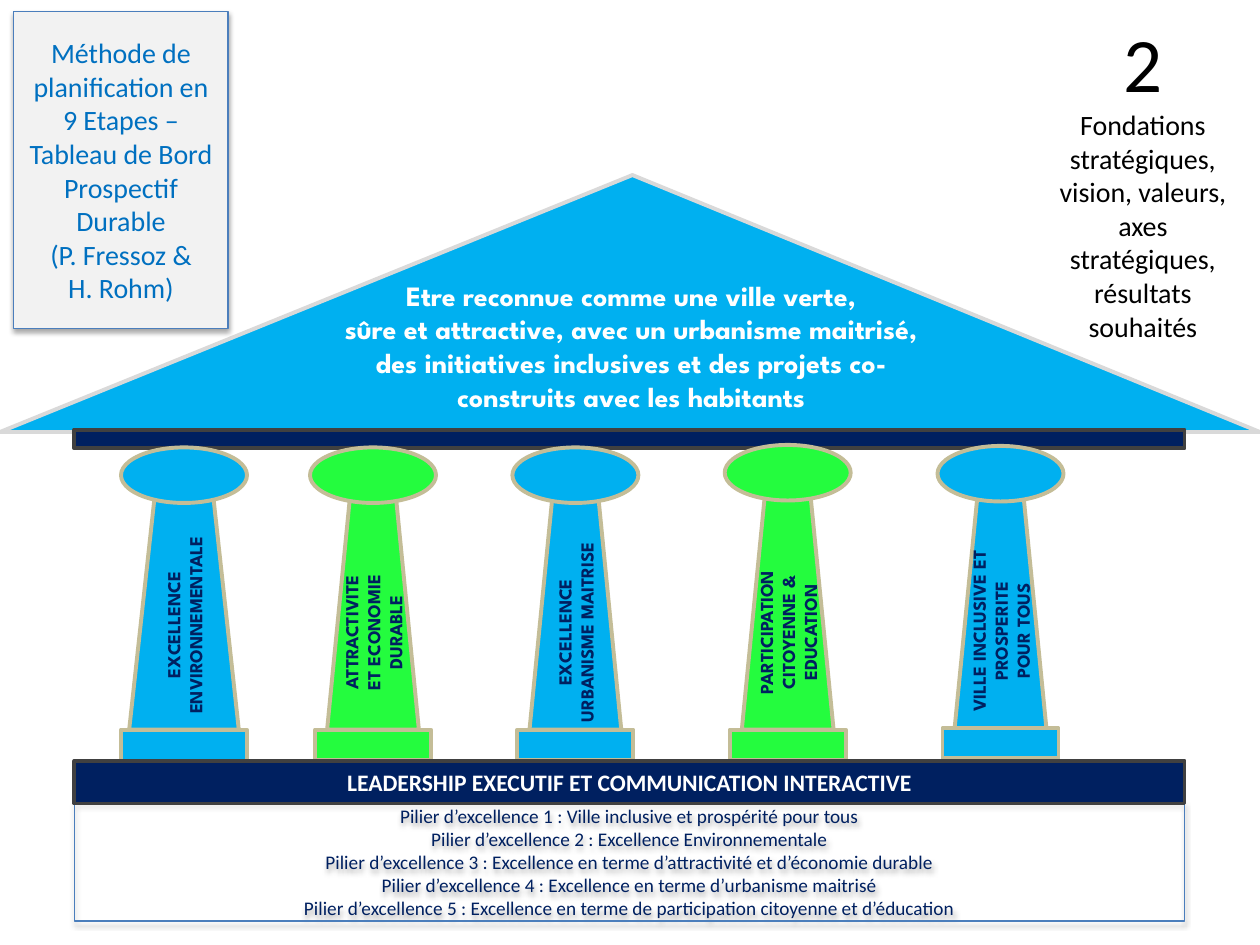
from dataclasses import dataclass

from lxml import etree
from pptx import Presentation
from pptx.dml.color import RGBColor
from pptx.enum import shapes, text
from pptx.oxml import ns
from pptx.util import Cm, Pt


@dataclass(frozen=True)
class Theme:
    sky: str = "00B0F0"
    green: str = "24FC3E"
    navy: str = "002060"
    stone: str = "C4BD97"
    charcoal: str = "404040"
    silver: str = "D9D9D9"
    pale: str = "F2F2F2"
    edge: str = "4B7EBC"
    link_blue: str = "0070C0"
    white: str = "FFFFFF"
    black: str = "000000"
    plain: str = "Calibri"
    display: str = "League Spartan"
    number_size: float = 44
    text_size: float = 16
    bar_size: float = 13.5
    list_size: float = 11
    pillar_size: float = 10.5
    heavy: float = 2.25
    thin: float = 0.75


THEME = Theme()
SHAPE = shapes.MSO_SHAPE


class TempleSlide:
    """Holds the theme and the slide being drawn."""

    def __init__(self, slide, theme):
        self.slide = slide
        self.theme = theme

    def outline(self, item, color, width):
        item.line.color.rgb = RGBColor.from_string(color)
        item.line.width = Pt(width)

    def style(self, font, size, color, name=None, bold=False):
        font.size, font.bold = Pt(size), bold
        font.name = name or self.theme.plain
        font.color.rgb = RGBColor.from_string(color)

    def block(self, kind, box, fill, line, width=None, parent=None):
        item = (parent or self.slide).shapes.add_shape(kind, *map(Cm, box))
        item.shadow.inherit = False
        item.fill.solid()
        item.fill.fore_color.rgb = RGBColor.from_string(fill)
        self.outline(item, line, width or self.theme.heavy)
        return item

    def label(self, item, lines, size, color, name=None, bold=False,
              margins=(0.25, 0.13, 0.25, 0.13), bullets_off=False):
        frame = item.text_frame
        frame.word_wrap = True
        frame.auto_size = text.MSO_AUTO_SIZE.NONE
        frame.vertical_anchor = text.MSO_ANCHOR.MIDDLE
        (frame.margin_left, frame.margin_top,
         frame.margin_right, frame.margin_bottom) = map(Cm, margins)
        for index, line in enumerate(lines):
            paragraph = frame.add_paragraph() if index else frame.paragraphs[0]
            if bullets_off:
                props = paragraph._p.get_or_add_pPr()
                props.set("marL", "0")
                props.set("indent", "0")
                etree.SubElement(props, ns.qn("a:buNone"))
                paragraph.space_before = Pt(0)
            paragraph.text = line
            paragraph.alignment = text.PP_ALIGN.CENTER
            self.style(paragraph.font, size, color, name, bold)

    def drop_shadow(self, item):
        props = item._element.spPr
        for old in props.findall(ns.qn("a:effectLst")):
            props.remove(old)
        effects = etree.SubElement(props, ns.qn("a:effectLst"))
        shadow = etree.SubElement(
            effects, ns.qn("a:outerShdw"), blurRad=str(Pt(3.1)),
            dist=str(Pt(1.8)), dir="5400000", rotWithShape="0")
        color = etree.SubElement(shadow, ns.qn("a:srgbClr"), val=self.theme.black)
        etree.SubElement(color, ns.qn("a:alpha"), val="35000")

    def place(self, item, box):
        item.left, item.top, item.width, item.height = map(Cm, box)

    def step_title(self, number, wording, box):
        title = self.slide.shapes.title
        self.place(title, box)
        frame = title.text_frame
        frame.word_wrap = True
        frame.auto_size = text.MSO_AUTO_SIZE.NONE
        frame.vertical_anchor = text.MSO_ANCHOR.TOP
        heading = frame.paragraphs[0]
        heading.alignment = text.PP_ALIGN.CENTER
        step = heading.add_run()
        step.text = number
        self.style(step.font, self.theme.number_size, self.theme.black)
        heading.add_line_break()
        caption = heading.add_run()
        caption.text = wording
        self.style(caption.font, self.theme.text_size, self.theme.black)

    def pillar_list(self, lines, box):
        body = self.slide.placeholders[1]
        self.place(body, box)
        self.outline(body, self.theme.edge, self.theme.thin)
        self.drop_shadow(body)
        self.label(body, lines, self.theme.list_size, self.theme.navy,
                   bullets_off=True)

    def pillar(self, lines, center, top, foot, color, shaft=(1.85, 4.7),
               base=(2.34, 0.61)):
        group = self.slide.shapes.add_group_shape()
        parts = (
            (SHAPE.TRAPEZOID, foot - shaft[1], shaft),
            (SHAPE.OVAL, top, (2.54, 1.12)),
            (SHAPE.RECTANGLE, foot, base),
        )
        # A group is itself the parent that owns the shapes collection
        column, *_ = [
            self.block(kind, (center - size[0] / 2, y, *size), color,
                       self.theme.stone, parent=group)
            for kind, y, size in parts]
        self.label(column, lines, self.theme.pillar_size, self.theme.navy,
                   self.theme.display, True, (0.18, 0.1, 0.18, 0.1))
        column.text_frame._txBody.bodyPr.set("vert", "vert270")


def main():
    deck = Presentation()
    deck.slide_width, deck.slide_height = Cm(25.4), Cm(19.05)
    temple = TempleSlide(deck.slides.add_slide(deck.slide_layouts[1]), THEME)

    # Step number and caption
    temple.step_title(
        "2", "Fondations stratégiques, vision, valeurs, axes stratégiques, "
        "résultats souhaités", (20.93, 0.18, 4.22, 2.16))

    # Roof with the vision
    roof = temple.block(SHAPE.ISOSCELES_TRIANGLE, (0, 3.53, 25.4, 5.18),
                        THEME.sky, THEME.silver)
    roof.adjustments[0] = 0.502
    temple.label(
        roof,
        ["Etre reconnue comme une ville verte,",
         "sûre et attractive, avec un urbanisme maitrisé, des initiatives "
         "inclusives et des projets co-construits avec les habitants"],
        THEME.text_size, THEME.white, THEME.display, True,
        (0.25, 0.13, 0.25, 1.03))

    # Beam under the roof
    temple.block(SHAPE.RECTANGLE, (1.5, 8.66, 22.38, 0.38),
                 THEME.navy, THEME.charcoal)

    # Pillars
    temple.pillar(["EXCELLENCE ENVIRONNEMENTALE"], 3.71, 9.02, 14.71,
                  THEME.sky, shaft=(2.21, 5.05), base=(2.54, 0.64))
    for lines, center, top, foot, color in (
        (["ATTRACTIVITE", "ET ECONOMIE DURABLE"], 7.52, 9.02, 14.71, THEME.green),
        (["EXCELLENCE URBANISME MAITRISE"], 11.6, 9.02, 14.71, THEME.sky),
        (["PARTICIPATION CITOYENNE & EDUCATION"], 15.88, 8.97, 14.71, THEME.green),
        (["VILLE INCLUSIVE ET PROSPERITE", "POUR TOUS"], 20.17, 8.99, 14.68,
         THEME.sky),
    ):
        temple.pillar(lines, center, top, foot, color)

    # Foundation and list of pillars
    foundation = temple.block(SHAPE.RECTANGLE, (1.5, 15.34, 22.38, 0.86),
                              THEME.navy, THEME.charcoal)
    temple.label(foundation, ["LEADERSHIP EXECUTIF ET COMMUNICATION INTERACTIVE"],
                 THEME.bar_size, THEME.white, bold=True,
                 margins=(0.18, 0.1, 0.18, 0.1))
    excellences = (
        "Ville inclusive et prospérité pour tous",
        "Excellence Environnementale",
        "Excellence en terme d’attractivité et d’économie durable",
        "Excellence en terme d’urbanisme maitrisé",
        "Excellence en terme de participation citoyenne et d’éducation",
    )
    temple.pillar_list(
        [f"Pilier d’excellence {rank} : {aim}"
         for rank, aim in enumerate(excellences, 1)],
        (1.5, 16.18, 22.38, 2.39))

    # Method card
    method = temple.block(SHAPE.RECTANGLE, (0.28, 0.23, 4.32, 6.4),
                          THEME.pale, THEME.edge, THEME.thin)
    temple.drop_shadow(method)
    temple.label(
        method,
        ["Méthode de planification en 9 Etapes – Tableau de Bord Prospectif Durable",
         "(P. Fressoz &", "H. Rohm)"],
        THEME.text_size, THEME.link_blue)

    deck.save("out.pptx")


if __name__ == "__main__":
    main()
